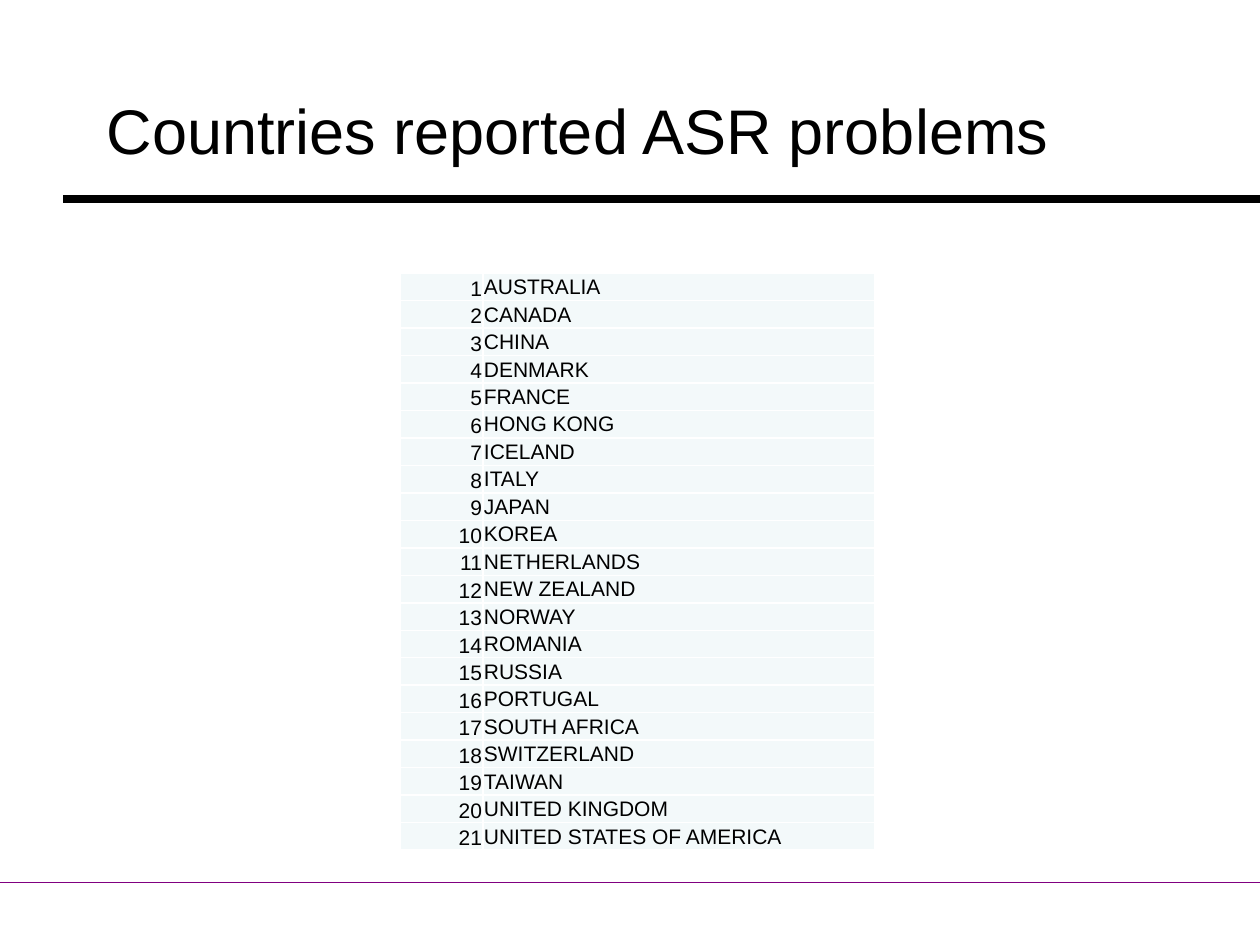
from lxml.etree import SubElement as Sub
from pptx import Presentation
from pptx.dml.color import RGBColor as Rgb
from pptx.enum.shapes import MSO_CONNECTOR as Conn
from pptx.enum.text import MSO_ANCHOR as Anchor, PP_ALIGN as Align
from pptx.oxml.ns import qn
from pptx.util import Pt

SCALE = 914400 / 126
COLORS = {"ink": "000000", "rule": "800080", "cell": "F3F9FA", "edge": "FFFFFF"}
NAMES = [
    "AUSTRALIA", "CANADA", "CHINA", "DENMARK", "FRANCE", "HONG KONG", "ICELAND",
    "ITALY", "JAPAN", "KOREA", "NETHERLANDS", "NEW ZEALAND", "NORWAY", "ROMANIA",
    "RUSSIA", "PORTUGAL", "SOUTH AFRICA", "SWITZERLAND", "TAIWAN",
    "UNITED KINGDOM", "UNITED STATES OF AMERICA",
]


def px(n):
    return round(n * SCALE)


def put(item, **form):
    for key, val in form.items():
        setattr(item, key, val)


class Deck:
    def __init__(self, wide, high, face):
        self.face = face
        self.show = Presentation()
        put(self.show, slide_width=px(wide), slide_height=px(high))
        self.slide = self.show.slides.add_slide(self.show.slide_layouts[5])

    def text(self, para, words, size, align):
        para.text = words
        para.alignment = align
        put(para.font, name=self.face, size=Pt(size))
        para.font.color.rgb = Rgb.from_string(COLORS["ink"])

    def title(self, words, left, top, wide, high):
        box = self.slide.shapes.title
        put(box, left=px(left), top=px(top), width=px(wide), height=px(high))
        put(box.text_frame, word_wrap=True, vertical_anchor=Anchor.MIDDLE)
        self.text(box.text_frame.paragraphs[0], words, 36, Align.LEFT)

    def line(self, left, right, y, color, size):
        rule = self.slide.shapes.add_connector(
            Conn.STRAIGHT, px(left), px(y), px(right), px(y))
        rule.line.color.rgb = Rgb.from_string(COLORS[color])
        rule.line.width = Pt(size)
        Sub(rule._element.spPr, qn("a:effectLst"))

    def cell(self, cell, words, align, anchor):
        put(cell, margin_left=px(1), margin_right=px(1), margin_top=px(1),
            margin_bottom=0, vertical_anchor=anchor)
        self.text(cell.text_frame.paragraphs[0], words, 12, align)
        props = cell._tc.get_or_add_tcPr()
        for side in "LRTB":
            edge = Sub(props, qn(f"a:ln{side}"), w=str(Pt(1)))
            fill = Sub(edge, qn("a:solidFill"))
            Sub(fill, qn("a:srgbClr"), val=COLORS["edge"])
        cell.fill.solid()
        cell.fill.fore_color.rgb = Rgb.from_string(COLORS["cell"])

    def table(self, names, left, top, wides, high):
        grid = self.slide.shapes.add_table(
            len(names), len(wides), px(left), px(top), px(sum(wides)), px(high)).table
        put(grid, first_row=False, horz_banding=False)
        for col, wide in zip(grid.columns, wides):
            col.width = px(wide)
        for num, name in enumerate(names):
            grid.rows[num].height = px(high / len(names))
            self.cell(grid.cell(num, 0), str(num + 1), Align.RIGHT, Anchor.BOTTOM)
            self.cell(grid.cell(num, 1), name, Align.LEFT, Anchor.MIDDLE)


def main():
    deck = Deck(1260, 945, "Arial")
    deck.line(63, 1260, 199, "ink", 4.5)
    deck.line(0, 1260, 882, "rule", 0.25)
    deck.title("Countries reported ASR problems", 94, 85, 987, 89)
    deck.table(NAMES, 400, 273, [83, 392], 578)
    deck.show.save("out.pptx")


if __name__ == "__main__":
    main()
